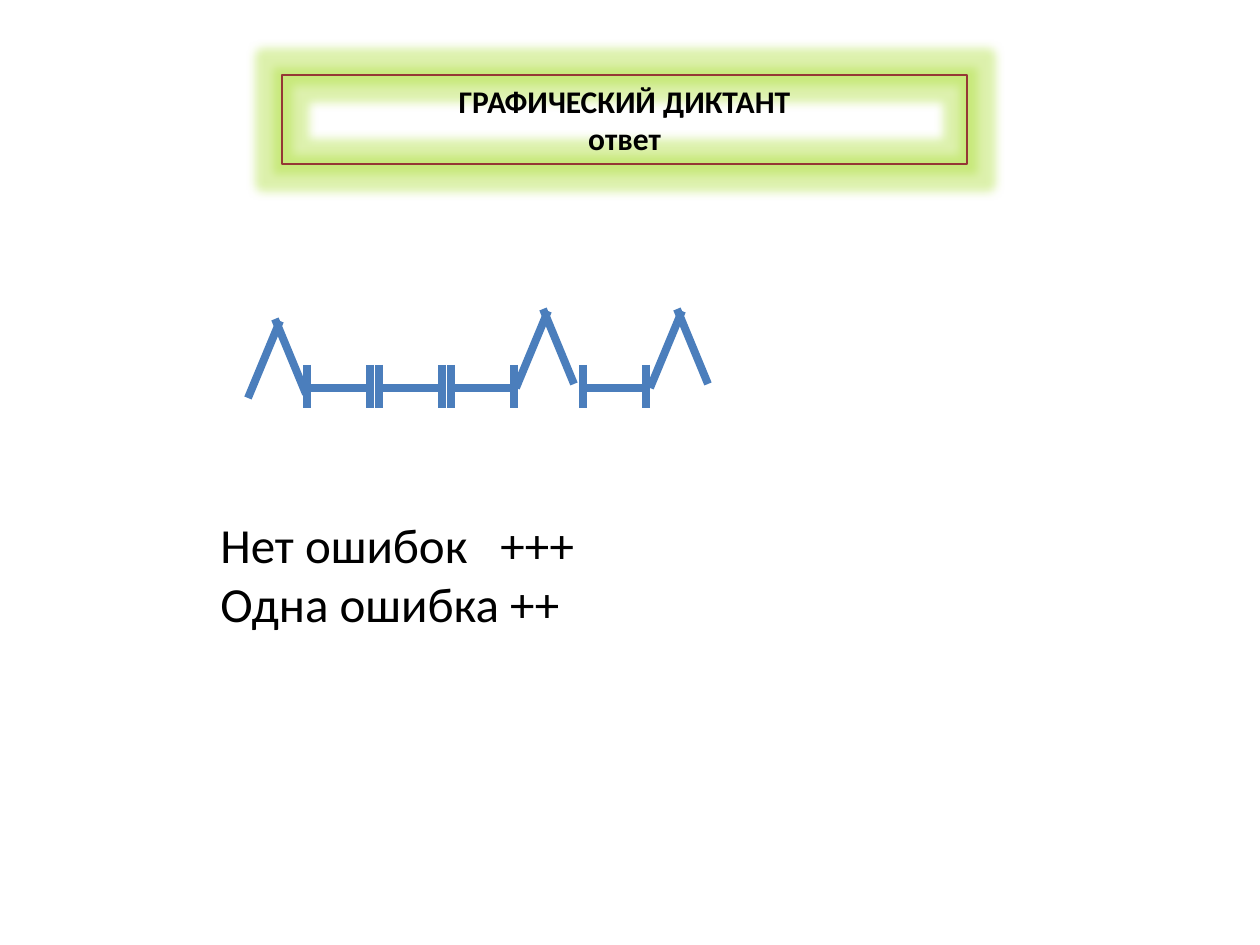
import pptx
import pptx.util
import pptx.dml.color
import pptx.enum.shapes
import pptx.enum.text
import pptx.oxml
import pptx.oxml.ns

SCALE = 914400 / 126
BLUE = "4B7EBC"
NS = pptx.oxml.ns.nsdecls("a")


def px(n):
    return pptx.util.Emu(round(n * SCALE))


def color(code):
    return pptx.dml.color.RGBColor.from_string(code)


deck = pptx.Presentation()
deck.slide_width = px(1260)
deck.slide_height = px(945)
slide = deck.slides.add_slide(deck.slide_layouts[6])

title = slide.shapes.add_shape(
    pptx.enum.shapes.MSO_SHAPE.RECTANGLE, px(282), px(75), px(685), px(89))
title.fill.background()
title.line.color.rgb = color("953735")
title.line.width = pptx.util.Pt(0.75)
title.shadow.inherit = False
effects = title.element.spPr.find(pptx.oxml.ns.qn("a:effectLst"))
effects.append(pptx.oxml.parse_xml(
    f'<a:glow {NS} rad="139700"><a:srgbClr val="AADE34">'
    '<a:alpha val="40000"/></a:srgbClr></a:glow>'))

notes = slide.shapes.add_textbox(px(208), px(508), px(868), px(190))

for box, text, size, bold, align in (
    (title, "ГРАФИЧЕСКИЙ ДИКТАНТ\nответ", 18, True, "CENTER"),
    (notes, "Нет ошибок\t+++\nОдна ошибка ++", 28, False, "LEFT"),
):
    frame = box.text_frame
    frame.word_wrap = True
    frame.text = text
    for line in frame.paragraphs:
        line.alignment = pptx.enum.text.PP_ALIGN[align]
        for run in line.runs:
            run.font.name = "Calibri"
            run.font.size = pptx.util.Pt(size)
            run.font.bold = bold
            run.font.color.rgb = color("000000")

props = notes.text_frame.paragraphs[0]._p.get_or_add_pPr()
props.append(pptx.oxml.parse_xml(
    f'<a:tabLst {NS}><a:tab pos="{px(280)}" algn="l"/></a:tabLst>'))

signs = []
for x, y in ((248, 398), (516, 388), (650, 388)):
    signs.append([(x, y, x + 32, y - 77), (x + 58, y - 4, x + 27, y - 79)])
for x in (307, 379, 451, 583):
    end = x + 63
    signs.append([(x, 388, end, 388), (end, 365, end, 408), (x, 365, x, 408)])

for sign in signs:
    group = slide.shapes.add_group_shape()
    for ends in sign:
        stroke = group.shapes.add_connector(
            pptx.enum.shapes.MSO_CONNECTOR.STRAIGHT, *map(px, ends))
        stroke.line.color.rgb = color(BLUE)
        stroke.line.width = pptx.util.Pt(4.5)
        stroke.element.spPr.append(pptx.oxml.parse_xml(f"<a:effectLst {NS}/>"))

deck.save("out.pptx")
